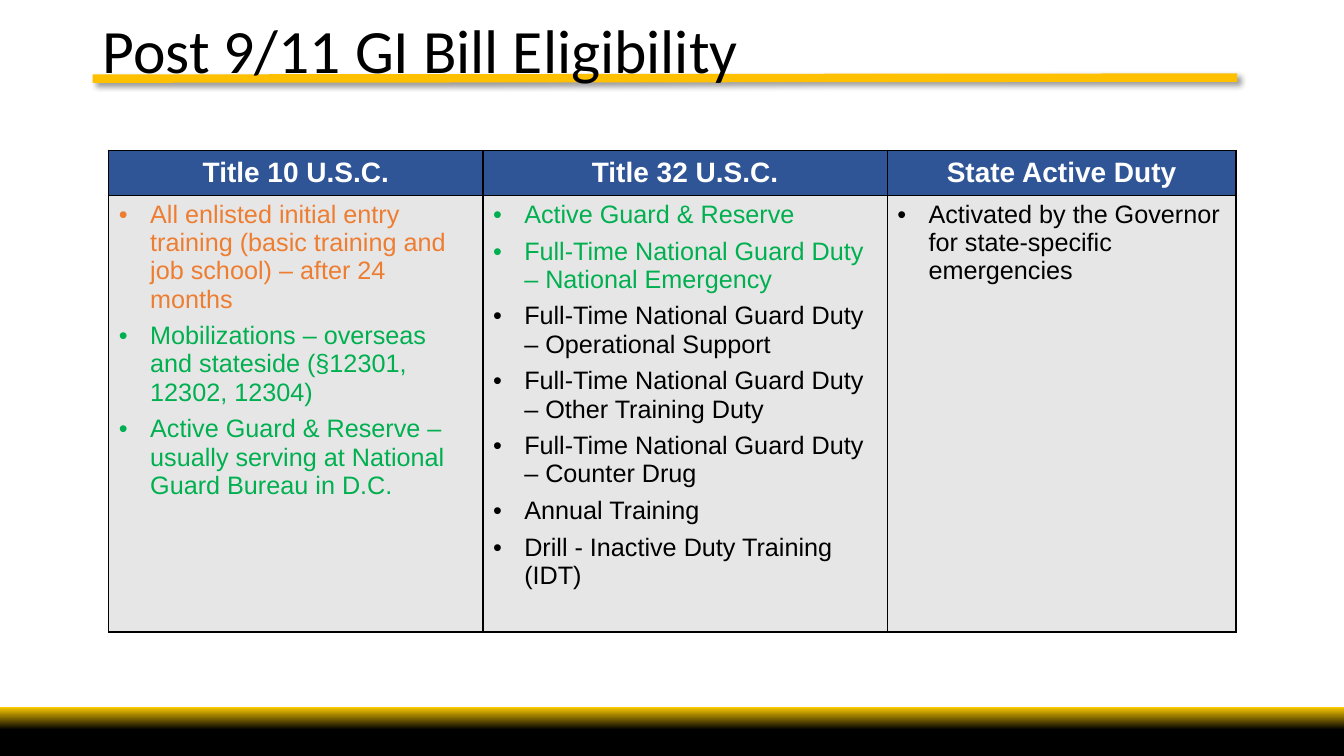
from dataclasses import dataclass

from lxml import etree
from pptx import Presentation
from pptx.dml.color import RGBColor
from pptx.enum.shapes import MSO_CONNECTOR, MSO_SHAPE
from pptx.enum.text import MSO_ANCHOR, PP_ALIGN
from pptx.oxml.ns import qn
from pptx.util import Inches, Pt

RECTANGLE = MSO_SHAPE.RECTANGLE
STRAIGHT = MSO_CONNECTOR.STRAIGHT
TOP, MIDDLE = MSO_ANCHOR.TOP, MSO_ANCHOR.MIDDLE
LEFT, CENTER = PP_ALIGN.LEFT, PP_ALIGN.CENTER

BLACK = RGBColor(0x00, 0x00, 0x00)
WHITE = RGBColor(0xFF, 0xFF, 0xFF)
AMBER = RGBColor(0xFF, 0xC0, 0x00)
GOLD = RGBColor(0xFF, 0xCC, 0x00)
BLUE = RGBColor(0x2F, 0x55, 0x97)
GRAY = RGBColor(0xE7, 0xE6, 0xE6)
ORANGE = RGBColor(0xED, 0x7D, 0x31)
GREEN = RGBColor(0x00, 0xB0, 0x50)

BULLET_INDENT = Inches(0.31)
ROW_HEIGHTS = (0.45, 4.33)


@dataclass(frozen=True)
class Duty:
    text: str
    color: RGBColor = BLACK


@dataclass(frozen=True)
class DutyColumn:
    heading: str
    width: float
    duties: tuple[Duty, ...]
    space_after: float = 6


COLUMNS = (
    DutyColumn("Title 10 U.S.C.", 3.71, (
        Duty("All enlisted initial entry training (basic training and job school) – after 24 months", ORANGE),
        Duty("Mobilizations – overseas and stateside (§12301, 12302, 12304)", GREEN),
        Duty("Active Guard & Reserve – usually serving at National Guard Bureau in D.C.", GREEN),
    )),
    DutyColumn("Title 32 U.S.C.", 4.01, (
        Duty("Active Guard & Reserve", GREEN),
        Duty("Full-Time National Guard Duty – National Emergency", GREEN),
        Duty("Full-Time National Guard Duty – Operational Support"),
        Duty("Full-Time National Guard Duty – Other Training Duty"),
        Duty("Full-Time National Guard Duty – Counter Drug"),
        Duty("Annual Training"),
        Duty("Drill - Inactive Duty Training (IDT)"),
    )),
    DutyColumn("State Active Duty", 3.46, (
        Duty("Activated by the Governor for state-specific emergencies"),
    ), space_after=0),
)


def write_text(paragraph, text: str, *, size: float, color: RGBColor, font: str = "Arial",
               bold: bool = False, align=LEFT, space_after: float = 0,
               line_spacing: float = 1.0, bullet: bool = False) -> None:
    paragraph.alignment = align
    paragraph.line_spacing = line_spacing
    paragraph.space_after = Pt(space_after)
    if bullet:
        properties = paragraph._p.get_or_add_pPr()
        properties.set("marL", str(BULLET_INDENT))
        properties.set("indent", str(-BULLET_INDENT))
        etree.SubElement(properties, qn("a:buFont"), typeface="Arial")
        etree.SubElement(properties, qn("a:buChar"), char="•")
    run = paragraph.add_run()
    run.text = text
    run.font.name = font
    run.font.size = Pt(size)
    run.font.bold = bold
    run.font.color.rgb = color


def format_cell(cell, fill: RGBColor, anchor) -> None:
    properties = cell._tc.get_or_add_tcPr()
    for side in ("lnL", "lnR", "lnT", "lnB"):
        border = etree.SubElement(properties, qn(f"a:{side}"), w=str(Pt(1)))
        solid = etree.SubElement(border, qn("a:solidFill"))
        etree.SubElement(solid, qn("a:srgbClr"), val=str(BLACK))
    cell.fill.solid()
    cell.fill.fore_color.rgb = fill
    cell.vertical_anchor = anchor


def add_title_rule(slide) -> None:
    rule = slide.shapes.add_connector(
        STRAIGHT, Inches(0.92), Inches(0.78), Inches(12.27), Inches(0.77))
    rule.line.color.rgb = AMBER
    rule.line.width = Pt(6)
    effects = etree.SubElement(rule._element.spPr, qn("a:effectLst"))
    shadow = etree.SubElement(effects, qn("a:outerShdw"), blurRad=str(Pt(4)),
                              dist=str(Pt(3)), dir="2700000", algn="tl", rotWithShape="0")
    shadow_color = etree.SubElement(shadow, qn("a:srgbClr"), val=str(BLACK))
    etree.SubElement(shadow_color, qn("a:alpha"), val="40000")


def add_footer_bar(slide, top: float, height: float):
    bar = slide.shapes.add_shape(
        RECTANGLE, Inches(-0.01), Inches(top), Inches(13.34), Inches(height))
    bar.shadow.inherit = False
    bar.line.fill.background()
    bar.fill.solid()
    bar.fill.fore_color.rgb = BLACK
    return bar


def add_footer(slide) -> None:
    fade = add_footer_bar(slide, 7.01, 0.23).fill
    fade.gradient()
    fade.gradient_angle = 90
    for stop, color in zip(fade.gradient_stops, (BLACK, GOLD)):
        stop.color.rgb = color
    add_footer_bar(slide, 7.24, 0.26)


def add_title(slide) -> None:
    box = slide.shapes.add_textbox(Inches(0.92), Inches(0.15), Inches(11.5), Inches(0.9))
    box.text_frame.word_wrap = True
    write_text(box.text_frame.paragraphs[0], "Post 9/11 GI Bill Eligibility",
               size=44, color=BLACK, font="Calibri", line_spacing=0.9)


def add_duty_table(slide) -> None:
    width = sum(column.width for column in COLUMNS)
    table = slide.shapes.add_table(
        len(ROW_HEIGHTS), len(COLUMNS), Inches(1.08), Inches(1.49),
        Inches(width), Inches(sum(ROW_HEIGHTS))).table
    for row, height in zip(table.rows, ROW_HEIGHTS):
        row.height = Inches(height)
    for index, column in enumerate(COLUMNS):
        table.columns[index].width = Inches(column.width)
        header, body = table.cell(0, index), table.cell(1, index)
        format_cell(header, BLUE, MIDDLE)
        write_text(header.text_frame.paragraphs[0], column.heading,
                   size=20, color=WHITE, bold=True, align=CENTER)
        format_cell(body, GRAY, TOP)
        frame = body.text_frame
        for position, duty in enumerate(column.duties):
            paragraph = frame.add_paragraph() if position else frame.paragraphs[0]
            write_text(paragraph, duty.text, size=18, color=duty.color,
                       space_after=column.space_after, bullet=True)


def main() -> None:
    presentation = Presentation()
    presentation.slide_width = Inches(13.33)
    presentation.slide_height = Inches(7.5)
    slide = presentation.slides.add_slide(presentation.slide_layouts[6])
    add_title_rule(slide)
    add_footer(slide)
    add_title(slide)
    add_duty_table(slide)
    presentation.save("out.pptx")


if __name__ == "__main__":
    main()
